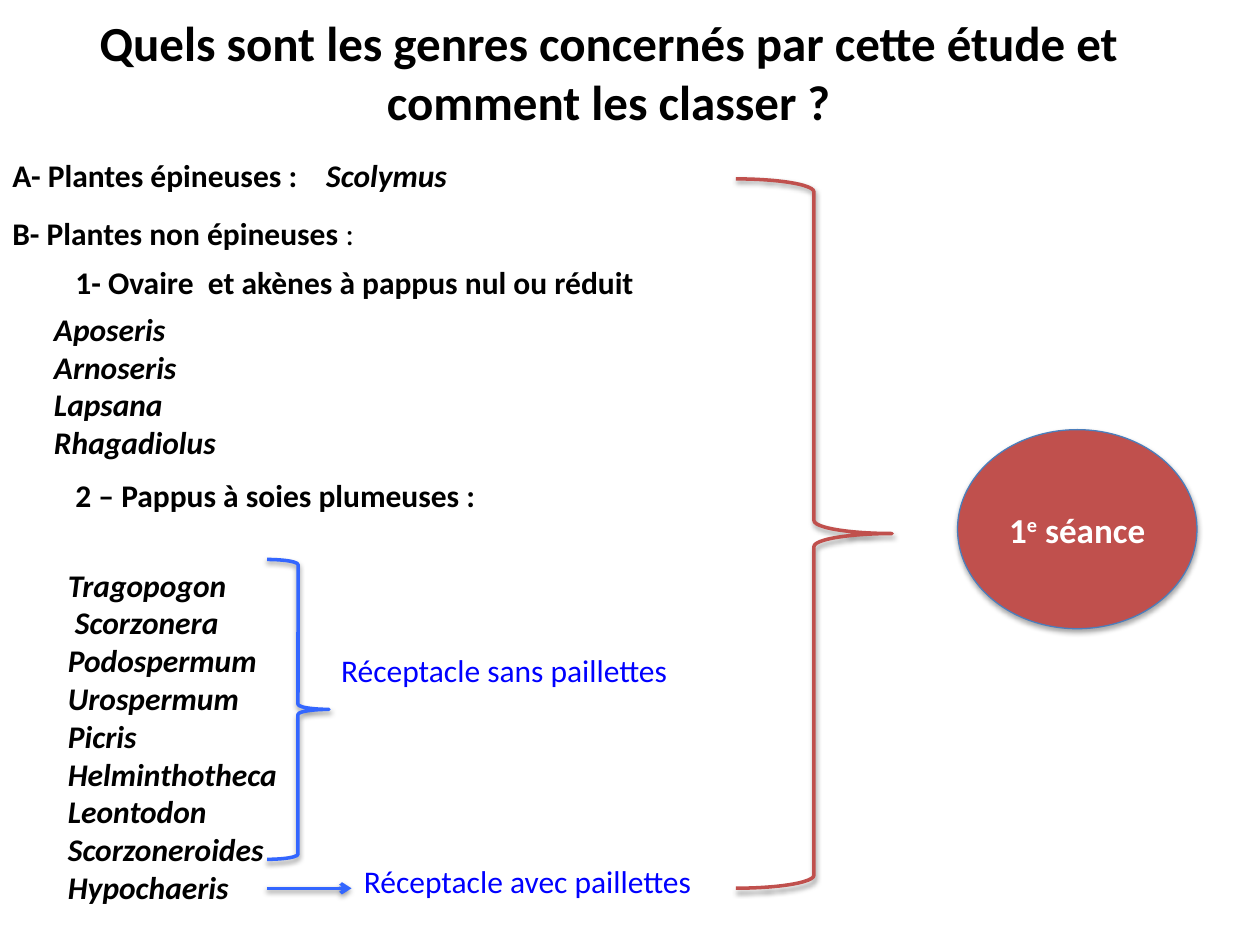
from lxml import etree
from pptx import Presentation
from pptx.dml.color import RGBColor
from pptx.enum.shapes import MSO_CONNECTOR, MSO_SHAPE
from pptx.enum.text import MSO_ANCHOR, PP_ALIGN
from pptx.oxml.ns import qn
from pptx.util import Inches, Pt

ELLIPSE, BRACE = MSO_SHAPE.OVAL, MSO_SHAPE.RIGHT_BRACE
STRAIGHT = MSO_CONNECTOR.STRAIGHT
TOP, MIDDLE = MSO_ANCHOR.TOP, MSO_ANCHOR.MIDDLE
LEFT, CENTER = PP_ALIGN.LEFT, PP_ALIGN.CENTER

BLACK, WHITE, RED, BLUE = "000000", "FFFFFF", "C0504D", "3366FF"
NOTE_BLUE, OUTLINE_BLUE = "0000FF", "4B7EBC"


def color(hex_code):
    return RGBColor.from_string(hex_code)


class SlideBuilder:
    font_name = "Calibri"
    body_size = 18

    def __init__(self, slide):
        self.slide = slide
        self.shapes = slide.shapes

    def group(self):
        """Send the next elements into a new group."""
        self.shapes = self.slide.shapes.add_group_shape().shapes

    def style(self, paragraph, size, ink, bold, italic=None, align=LEFT):
        paragraph.alignment = align
        font = paragraph.font
        font.name, font.size = self.font_name, Pt(size)
        font.bold, font.italic = bold, italic
        font.color.rgb = color(ink)

    def text(self, box, lines, size=body_size, ink=BLACK, bold=True,
             italic=None, align=LEFT, anchor=TOP):
        frame = self.shapes.add_textbox(*map(Inches, box)).text_frame
        frame.word_wrap = True
        frame.vertical_anchor = anchor
        for i, line in enumerate(lines):
            paragraph = frame.paragraphs[0] if i == 0 else frame.add_paragraph()
            paragraph.add_run().text = line
            self.style(paragraph, size, ink, bold, italic, align)
        return frame.paragraphs[0]

    def shadow(self, shape, opacity, distance):
        properties = shape._element.spPr
        effects = properties.find(qn("a:effectLst"))
        if effects is None:
            effects = etree.SubElement(properties, qn("a:effectLst"))
        outer = etree.SubElement(
            effects, qn("a:outerShdw"), blurRad=str(Pt(3.1)),
            dist=str(Pt(distance)), dir="5400000", rotWithShape="0")
        black = etree.SubElement(outer, qn("a:srgbClr"), val=BLACK)
        etree.SubElement(black, qn("a:alpha"), val=str(opacity * 1000))

    def outline(self, shape, ink, width):
        shape.line.color.rgb = color(ink)
        shape.line.width = Pt(width)

    def brace(self, box, ink):
        brace = self.shapes.add_shape(BRACE, *map(Inches, box))
        brace.shadow.inherit = False
        brace.fill.background()
        self.outline(brace, ink, 2)
        self.shadow(brace, 38, 1.6)

    def ellipse(self, box):
        ellipse = self.shapes.add_shape(ELLIPSE, *map(Inches, box))
        ellipse.shadow.inherit = False
        ellipse.fill.solid()
        ellipse.fill.fore_color.rgb = color(RED)
        self.outline(ellipse, OUTLINE_BLUE, 0.75)
        self.shadow(ellipse, 35, 1.8)
        ellipse.text_frame.vertical_anchor = MIDDLE
        return ellipse.text_frame.paragraphs[0]

    def arrow(self, start, end, ink):
        arrow = self.shapes.add_connector(STRAIGHT, *map(Inches, start + end))
        self.outline(arrow, ink, 2)
        etree.SubElement(arrow.line._get_or_add_ln(), qn("a:tailEnd"), type="arrow")
        self.shadow(arrow, 38, 1.6)


def main():
    prs = Presentation()
    prs.slide_width, prs.slide_height = Inches(10), Inches(7.5)
    page = SlideBuilder(prs.slides.add_slide(prs.slide_layouts[6]))

    # Title
    page.text((0.33, -0.06, 9, 1.25),
              ["Quels sont les genres concernés par cette étude et comment les classer ?"],
              size=28, align=CENTER, anchor=MIDDLE)

    # Spiny plants, with the genus set at a tab stop
    spiny = page.text((0, 1.19, 8.69, 0.4), ["A- Plantes épineuses :\t"])
    tabs = etree.Element(qn("a:tabLst"))
    etree.SubElement(tabs, qn("a:tab"), pos=str(Inches(2.49)), algn="l")
    spiny._p.get_or_add_pPr().insert(0, tabs)
    genus = spiny.add_run()
    genus.text = "Scolymus"
    genus.font.italic = True

    # Plants without spines
    spineless = page.text((0, 1.65, 6.83, 0.4), ["B- Plantes non épineuses "])
    colon = spineless.add_run()
    colon.text = ":"
    colon.font.bold = False

    page.text((0.5, 2.04, 9, 0.4), ["1- Ovaire  et akènes à pappus nul ou réduit"])
    page.text((0.33, 2.41, 3.28, 1.31),
              ["Aposeris", "Arnoseris", "Lapsana", "Rhagadiolus"], italic=True)
    page.text((0.5, 3.73, 6.48, 0.4), ["2 – Pappus à soies plumeuses :"])
    page.text((0.44, 4.44, 3.85, 2.83),
              ["Tragopogon", " Scorzonera", "Podospermum", "Urospermum", "Picris",
               "Helminthotheca", "Leontodon", "Scorzoneroides", "Hypochaeris"],
              italic=True)

    # First session
    page.group()
    session = page.ellipse((7.6, 3.41, 1.9, 1.58))
    for part in ("1", "e", " séance"):
        run = session.add_run()
        run.text = part
        if part == "e":
            run._r.get_or_add_rPr().set("baseline", "30000")
    page.style(session, 20, WHITE, True, align=CENTER)
    page.brace((5.84, 1.42, 1.24, 5.63), RED)

    # Receptacle without scales
    page.group()
    page.brace((2.12, 4.44, 0.49, 2.38), BLUE)
    page.text((2.61, 5.12, 3.07, 0.4), ["Réceptacle sans paillettes"],
              ink=NOTE_BLUE, bold=False)

    # Receptacle with scales
    page.group()
    page.arrow((2.12, 7.05), (2.79, 7.05), BLUE)
    page.text((2.79, 6.79, 2.88, 0.4), ["Réceptacle avec paillettes"],
              ink=NOTE_BLUE, bold=False)

    prs.save("out.pptx")


if __name__ == "__main__":
    main()
